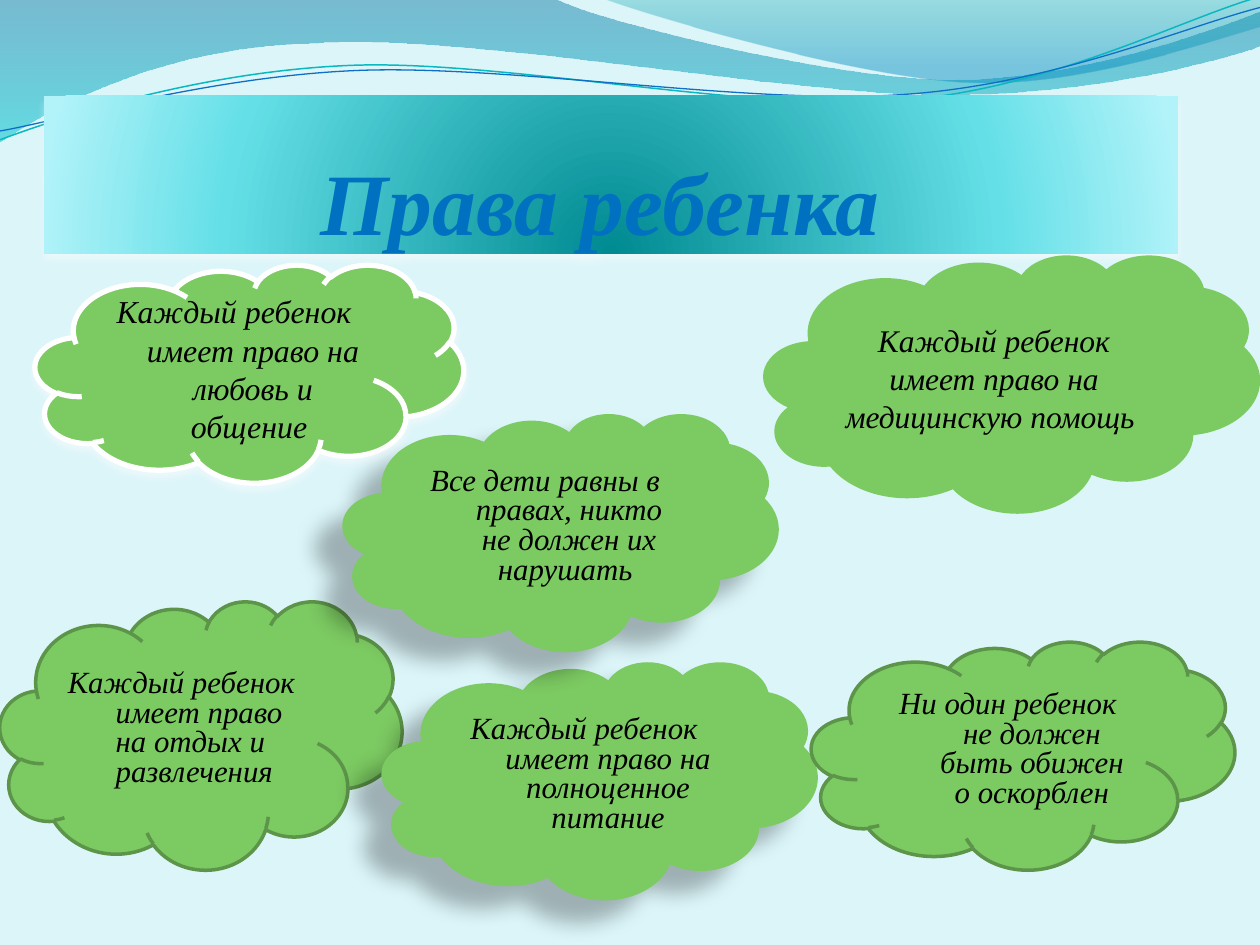
"""Builds the slide on the rights of the child: a wave header, a title band and six clouds."""
from dataclasses import dataclass
from math import cos, radians, sin
from typing import NamedTuple, Optional

from lxml.etree import SubElement
from pptx import Presentation
from pptx.dml.color import RGBColor
from pptx.enum.shapes import MSO_SHAPE
from pptx.enum.text import MSO_ANCHOR, PP_ALIGN
from pptx.oxml.ns import qn
from pptx.util import Inches, Pt


class Line(NamedTuple):
    color: str
    width: float


class Shadow(NamedTuple):
    color: str
    opacity: int
    blur: float
    distance: float
    angle: int


class Stop(NamedTuple):
    position: int
    color: str
    opacity: int = 100


@dataclass(frozen=True)
class Theme:
    font: str = "Times New Roman"
    background: str = "DBF5F9"
    cloud: str = "7CCA62"
    text: str = "000000"
    title: str = "0070C0"
    title_size: float = 50
    large: float = 18
    small: float = 17.6
    outline: Line = Line("5C9549", 2)
    halo: Line = Line("FFFFFF", 3)
    glow: Shadow = Shadow("FFFFFF", 48, 4.5, 3, 90)
    cast: Shadow = Shadow("000000", 28, 11.8, 19.7, 141)
    band: tuple = (Stop(0, "008A91"), Stop(68, "64DFE7"), Stop(100, "B1F3F9"))


@dataclass(frozen=True)
class Wave:
    start: tuple
    segments: tuple
    stops: tuple = ()
    line: Optional[Line] = None
    tilt: float = 0


@dataclass(frozen=True)
class Cloud:
    text: str
    box: tuple
    size: float
    line: Optional[Line] = None
    shadow: Optional[Shadow] = None
    hanging: float = 0.38
    spacing: float = 0.8
    before: float = 0
    align: PP_ALIGN = PP_ALIGN.CENTER


THEME = Theme()
WAVE_CENTER = (5, 0.58)

WAVES = (
    Wave((0, 0), (
        (4.4, -0.01),
        (4.76, 0.17, 6.64, 0.63, 7.58, 0.63), (8.53, 0.63, 9.58, 0.26, 10, 0.09),
        (10.01, 0.36),
        (9.83, 0.44, 8.7, 0.76, 7.46, 0.75), (6.22, 0.75, 3.82, 0.28, 2.57, 0.34),
        (1.29, 0.36, 0.46, 0.83, -0.01, 1.13), (0, 0),
    ), stops=(Stop(0, "0074A1", 45), Stop(100, "00C6CF", 55))),
    Wave((4.79, -0.01), (
        (5.09, 0.11, 6.82, 0.62, 7.69, 0.65), (8.56, 0.69, 9.61, 0.32, 10, 0.21),
        (10, 0), (4.79, -0.01),
    ), stops=(Stop(0, "00A1A9", 30), Stop(80, "008BBF", 45))),
    Wave((0, 1.11), (
        (0.48, 0.93, 1.58, 0.57, 2.77, 0.52), (3.95, 0.47, 5.93, 0.89, 7.13, 0.8),
        (8.33, 0.71, 9.38, 0.15, 9.98, -0.02),
    ), line=Line("0AB8BF", 0.85), tilt=-2.7),
    Wave((0, 1.04), (
        (0.47, 0.96, 1.64, 0.61, 2.83, 0.56), (4.03, 0.51, 5.97, 0.84, 7.17, 0.75),
        (8.36, 0.67, 9.41, 0.21, 10, 0.06),
    ), line=Line("0F6FC6", 0.75), tilt=-2.7),
)

CLOUDS = (
    Cloud("Каждый ребенок имеет право на любовь и общение ", (0.28, 2.1, 3.4, 1.73),
          18.2, THEME.halo, THEME.glow, hanging=0.3, spacing=1, before=3.6),
    Cloud("Каждый ребенок имеет право на медицинскую помощь ", (6.06, 2.02, 3.94, 2.05),
          THEME.large, hanging=0, spacing=1),
    Cloud("Каждый ребенок имеет право на отдых и развлечения", (0, 4.77, 3.19, 2.13),
          THEME.small, THEME.outline, before=3.6, align=PP_ALIGN.LEFT),
    Cloud("Каждый ребенок имеет право на полноценное питание", (3.03, 5.25, 3.46, 1.89),
          THEME.small, shadow=THEME.cast),
    Cloud("Ни один ребенок не должен быть обижен о оскорблен", (6.44, 5.09, 3.36, 1.81),
          THEME.small, THEME.outline),
    Cloud("Все дети равны в правах, никто не должен их нарушать ", (2.72, 3.28, 3.46, 1.89),
          THEME.small, shadow=THEME.cast),
)


def apply(target, values: dict) -> None:
    """Set every named format value on the target."""
    for name, value in values.items():
        setattr(target, name, value)


def add_color(parent, color: str, opacity: int) -> None:
    """Append a colour with its opacity to an XML parent."""
    node = SubElement(parent, qn("a:srgbClr"), val=color)
    if opacity < 100:
        SubElement(node, qn("a:alpha"), val=str(opacity * 1000))


def fill_gradient(shape, stops: tuple, radial: bool = False) -> None:
    """Fill a shape with a vertical or a circular gradient."""
    shape.fill.gradient()
    gradient = shape._element.spPr.find(qn("a:gradFill"))
    for child in list(gradient):
        gradient.remove(child)
    stop_list = SubElement(gradient, qn("a:gsLst"))
    for stop in stops:
        node = SubElement(stop_list, qn("a:gs"), pos=str(stop.position * 1000))
        add_color(node, stop.color, stop.opacity)
    if radial:
        path = SubElement(gradient, qn("a:path"), {"path": "circle"})
        SubElement(path, qn("a:fillToRect"), l="50000", t="130000", r="50000", b="-30000")
    else:
        SubElement(gradient, qn("a:lin"), ang="5400000", scaled="0")


def style_edge(shape, line: Optional[Line], shadow: Optional[Shadow] = None) -> None:
    """Set the outline and the shadow of a shape, or remove them."""
    shape.shadow.inherit = False
    if line:
        shape.line.color.rgb = RGBColor.from_string(line.color)
        shape.line.width = Pt(line.width)
    else:
        shape.line.fill.background()
    if shadow:
        effects = shape._element.spPr.find(qn("a:effectLst"))
        node = SubElement(effects, qn("a:outerShdw"), blurRad=str(Pt(shadow.blur)),
                          dist=str(Pt(shadow.distance)), dir=str(shadow.angle * 60000),
                          algn="ctr", rotWithShape="0")
        add_color(node, shadow.color, shadow.opacity)


def write_text(shape, text: str, color: str, frame: dict, paragraph: dict, font: dict) -> None:
    """Write one formatted paragraph into a shape."""
    body = shape.text_frame
    line = body.paragraphs[0]
    run = line.add_run()
    run.text = text
    run.font.color.rgb = RGBColor.from_string(color)
    apply(body, {"word_wrap": True, **frame})
    apply(line, paragraph)
    apply(run.font, {"name": THEME.font, "italic": True, **font})


def level(points: tuple, tilt: float) -> list:
    """Turn a flat row of coordinates back by the tilt and give points in EMU."""
    c, s = cos(radians(-tilt)), sin(radians(-tilt))
    cx, cy = WAVE_CENTER
    return [(Inches(cx + (x - cx) * c - (y - cy) * s), Inches(cy + (x - cx) * s + (y - cy) * c))
            for x, y in zip(points[::2], points[1::2])]


def draw_wave(slide, wave: Wave) -> None:
    """Draw a filled or an outlined wave from straight and cubic segments."""
    segments = [level(segment, wave.tilt) for segment in wave.segments]
    builder = slide.shapes.build_freeform(*level(wave.start, wave.tilt)[0])
    builder.add_line_segments([points[-1] for points in segments], close=bool(wave.stops))
    ribbon = builder.convert_to_shape()
    for node, points in zip(list(ribbon._element.iter(qn("a:lnTo"))), segments):
        if len(points) == 3:
            curve = node.makeelement(qn("a:cubicBezTo"))
            for x, y in points:
                SubElement(curve, qn("a:pt"), x=str(x - ribbon.left), y=str(y - ribbon.top))
            node.getparent().replace(node, curve)
    ribbon.rotation = wave.tilt
    if wave.stops:
        fill_gradient(ribbon, wave.stops)
    else:
        ribbon.fill.background()
    style_edge(ribbon, wave.line)


def draw_title(slide) -> None:
    """Draw the title on its gradient band."""
    band = slide.shapes.add_shape(MSO_SHAPE.RECTANGLE, *map(Inches, (0.35, 0.76, 9, 1.25)))
    fill_gradient(band, THEME.band, radial=True)
    style_edge(band, None, THEME.glow)
    write_text(band, "Права ребенка ", THEME.title,
               {"vertical_anchor": MSO_ANCHOR.BOTTOM, "margin_left": 0, "margin_right": 0,
                "margin_top": Inches(0.05), "margin_bottom": 0},
               {"alignment": PP_ALIGN.CENTER}, {"size": Pt(THEME.title_size), "bold": True})


def draw_cloud(slide, cloud: Cloud) -> None:
    """Draw one right of the child in a cloud."""
    puff = slide.shapes.add_shape(MSO_SHAPE.CLOUD, *map(Inches, cloud.box))
    puff.fill.solid()
    puff.fill.fore_color.rgb = RGBColor.from_string(THEME.cloud)
    style_edge(puff, cloud.line, cloud.shadow)
    write_text(puff, cloud.text, THEME.text, {"vertical_anchor": MSO_ANCHOR.MIDDLE},
               {"alignment": cloud.align, "line_spacing": cloud.spacing,
                "space_before": Pt(cloud.before)}, {"size": Pt(cloud.size)})
    properties = puff.text_frame.paragraphs[0]._p.get_or_add_pPr()
    apply_indent = {"marL": cloud.hanging, "indent": -cloud.hanging}
    for name, length in apply_indent.items():
        properties.set(name, str(Inches(length)))


def main() -> None:
    """Build and save the slide."""
    deck = Presentation()
    apply(deck, {"slide_width": Inches(10), "slide_height": Inches(7.5)})
    slide = deck.slides.add_slide(deck.slide_layouts[6])
    slide.background.fill.solid()
    slide.background.fill.fore_color.rgb = RGBColor.from_string(THEME.background)
    for wave in WAVES:
        draw_wave(slide, wave)
    draw_title(slide)
    for cloud in CLOUDS:
        draw_cloud(slide, cloud)
    deck.save("out.pptx")


if __name__ == "__main__":
    main()
